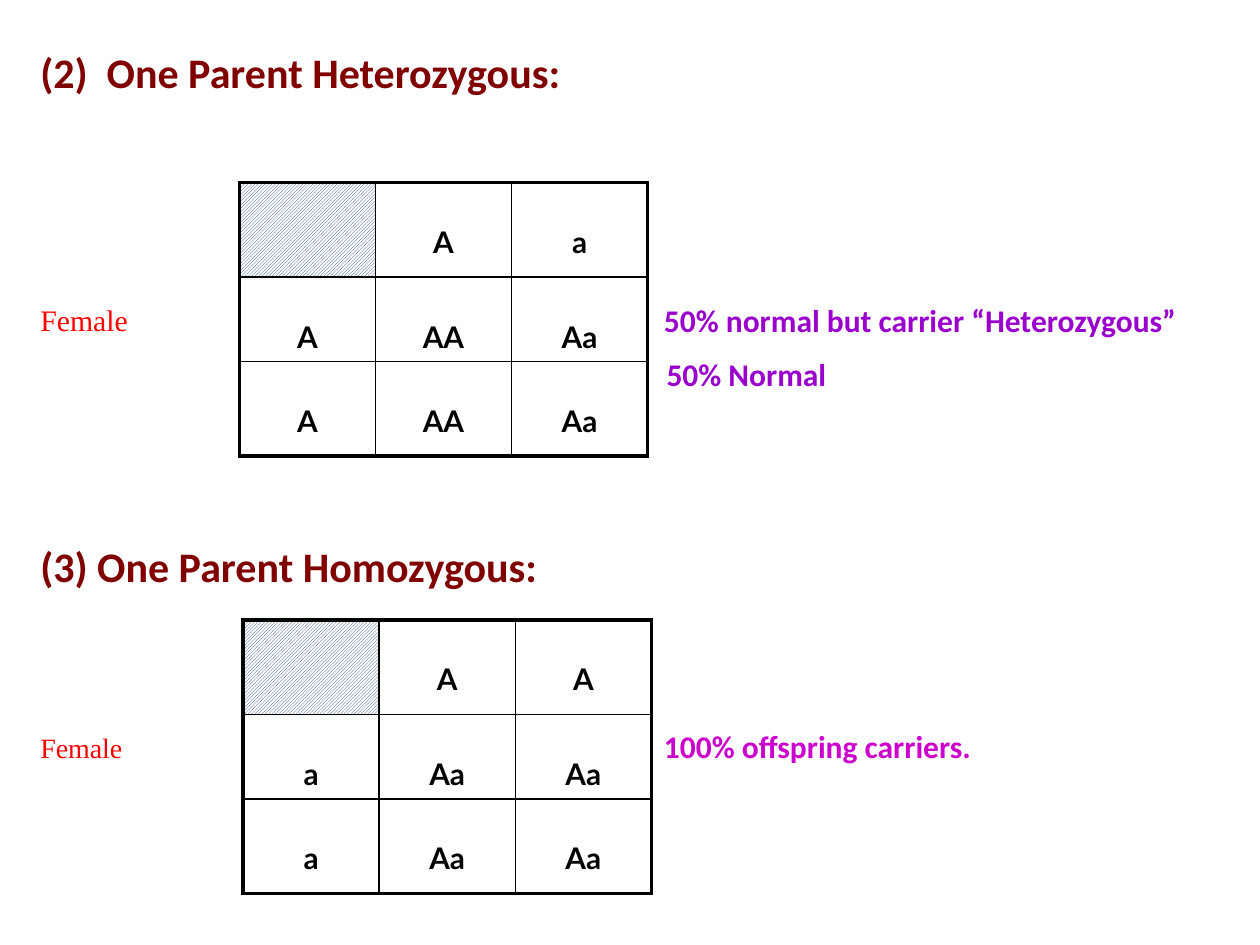
"""Build a slide of two Punnett squares with their offspring ratios."""
from lxml import etree
from pptx import Presentation
from pptx.dml.color import RGBColor
from pptx.enum import dml, text
from pptx.oxml import ns
from pptx.util import Inches, Pt

THEME = {
    "title": ("Calibri", 24, "800000", True),
    "sex": ("Times New Roman", 17, "FF0000", False),
    "sex small": ("Times New Roman", 16, "FF0000", False),
    "ratio": ("Calibri", 18, "9900CC", True),
    "carrier": ("Calibri", 18, "CC00CC", True),
    "gene": ("Lato", 17, "000000", True),
    "hatch": "1F497D",
    "paper": "FFFFFF",
    "rule": "000000",
    "thick": 2.25,
    "thin": 1,
}

LABELS = [
    ("(2)  One Parent Heterozygous:", "title", 0.32, 0.57),
    ("Female", "sex", 0.32, 2.54),
    ("50% normal but carrier “Heterozygous”", "ratio", 5.27, 2.54),
    ("50% Normal", "ratio", 5.29, 2.97),
    ("(3) One Parent Homozygous:", "title", 0.32, 4.49),
    ("Female", "sex small", 0.32, 5.93),
    ("100% offspring carriers.", "carrier", 5.27, 5.92),
]

SQUARES = [
    (1.9, 1.45, [["", "A", "a"], ["A", "AA", "Aa"], ["A", "AA", "Aa"]]),
    (1.93, 4.92, [["", "A", "A"], ["a", "Aa", "Aa"], ["a", "Aa", "Aa"]]),
]
COL = 1.08
ROWS = (0.75, 0.67, 0.75)


def style(para, role):
    name, size, color, bold = THEME[role]
    font = para.font
    font.name, font.size, font.bold = name, Pt(size), bold
    font.color.rgb = RGBColor.from_string(color)


def label(slide, words, role, left, mid):
    high = 0.4
    box = slide.shapes.add_textbox(
        Inches(left), Inches(mid - high / 2), Inches(4.6), Inches(high))
    frame = box.text_frame
    frame.word_wrap = True
    frame.vertical_anchor = text.MSO_ANCHOR.MIDDLE
    frame.margin_left = frame.margin_right = 0
    frame.margin_top = frame.margin_bottom = 0
    frame.text = words
    style(frame.paragraphs[0], role)


def border(cell, row, col, last):
    edges = (("a:lnL", col == 0), ("a:lnR", col == last),
             ("a:lnT", row == 0), ("a:lnB", row == last))
    props = cell._tc.get_or_add_tcPr()
    for spot, (tag, outer) in enumerate(edges):
        line = etree.Element(ns.qn(tag))
        line.set("w", str(Pt(THEME["thick" if outer else "thin"])))
        fill = etree.SubElement(line, ns.qn("a:solidFill"))
        etree.SubElement(fill, ns.qn("a:srgbClr")).set("val", THEME["rule"])
        props.insert(spot, line)


def paint(cell, gene):
    if gene:
        cell.fill.background()
        return
    cell.fill.patterned()
    cell.fill.pattern = dml.MSO_PATTERN.DARK_UPWARD_DIAGONAL
    cell.fill.fore_color.rgb = RGBColor.from_string(THEME["hatch"])
    cell.fill.back_color.rgb = RGBColor.from_string(THEME["paper"])


def square(slide, left, top, genes):
    size = len(genes)
    table = slide.shapes.add_table(
        size, size, Inches(left), Inches(top),
        Inches(COL * size), Inches(sum(ROWS))).table
    table.first_row = table.horz_banding = False
    for row, line in enumerate(genes):
        table.rows[row].height = Inches(ROWS[row])
        table.columns[row].width = Inches(COL)
        for col, gene in enumerate(line):
            cell = table.cell(row, col)
            cell.text = gene
            cell.margin_top = Inches(0.33)
            para = cell.text_frame.paragraphs[0]
            para.alignment = text.PP_ALIGN.CENTER
            style(para, "gene")
            paint(cell, gene)
            border(cell, row, col, size - 1)


def main():
    deck = Presentation()
    deck.slide_width, deck.slide_height = Inches(10), Inches(7.5)
    slide = deck.slides.add_slide(deck.slide_layouts[6])
    for item in LABELS:
        label(slide, *item)
    for item in SQUARES:
        square(slide, *item)
    deck.save("out.pptx")


if __name__ == "__main__":
    main()
